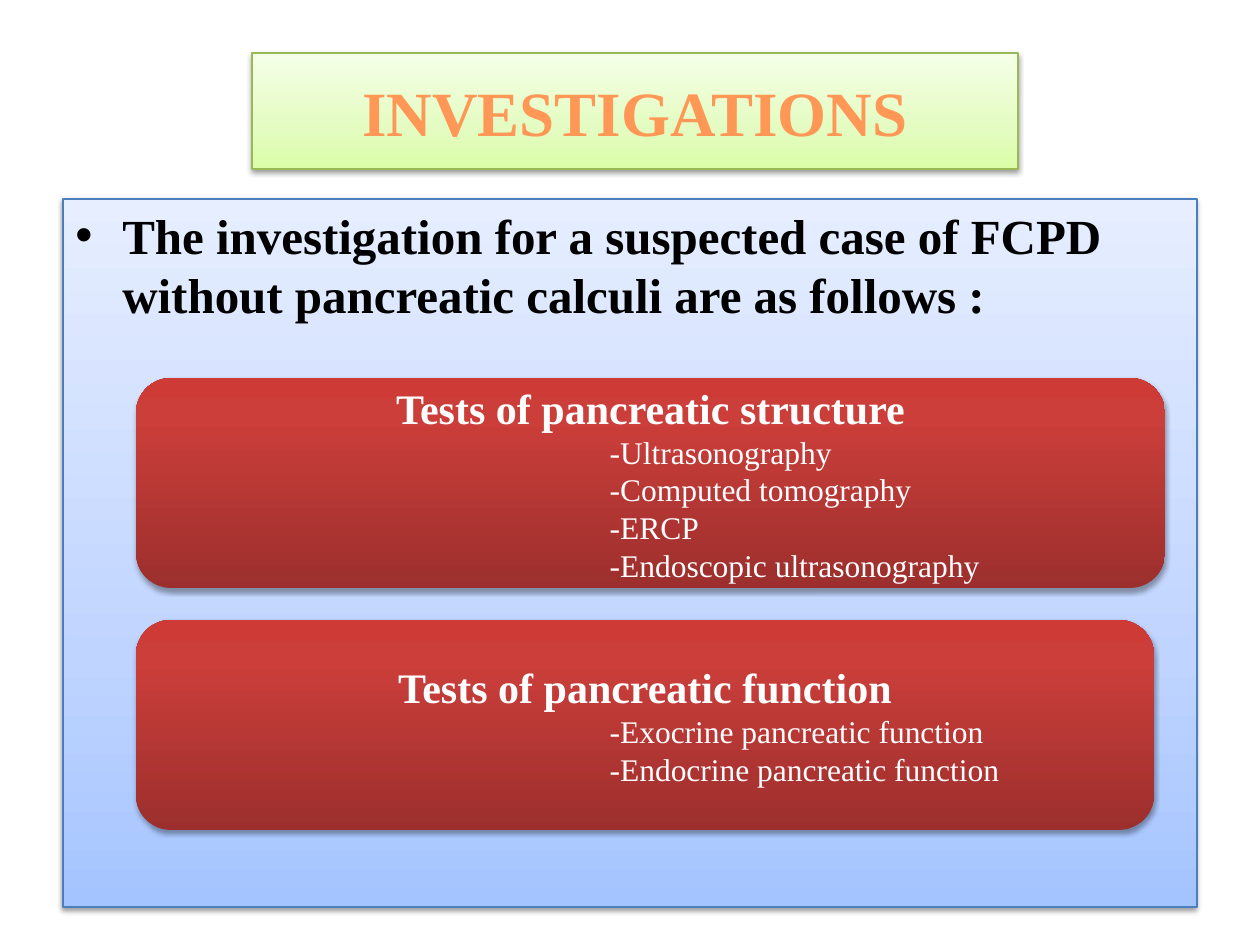
import pptx
import pptx.dml.color
import pptx.enum.shapes
import pptx.enum.text
import pptx.oxml.ns
import pptx.util
from lxml import etree

PX = 914400 / 126
FONT = "Times New Roman"
CENTER = pptx.enum.text.PP_ALIGN.CENTER
LEFT = pptx.enum.text.PP_ALIGN.LEFT
MIDDLE = pptx.enum.text.MSO_ANCHOR.MIDDLE
TOP = pptx.enum.text.MSO_ANCHOR.TOP
RECTANGLE = pptx.enum.shapes.MSO_SHAPE.RECTANGLE
ROUNDED = pptx.enum.shapes.MSO_SHAPE.ROUNDED_RECTANGLE

GREEN = [(0, "DAFDA7"), (35, "E4FCC2"), (100, "F5FFE7")]
BLUE = [(0, "A4C4FF"), (35, "BFD4FF"), (100, "E6EEFF")]
RED = [(0, "9C2F2D"), (80, "CB3E3A"), (100, "CE3B37")]


def px(length):
    return pptx.util.Emu(round(length * PX))


def color(value):
    return pptx.dml.color.RGBColor.from_string(value)


def add_element(parent, tag, **attributes):
    element = etree.SubElement(parent, pptx.oxml.ns.qn(tag))
    for name, value in attributes.items():
        element.set(name, str(value))
    return element


def set_gradient(shape, stops):
    """Fill the shape from bottom to top with (percent, colour) stops."""
    shape.fill.gradient()
    shape.fill.gradient_angle = 90
    stop_list = shape.element.spPr.find(".//" + pptx.oxml.ns.qn("a:gsLst"))
    for stop in list(stop_list):
        stop_list.remove(stop)
    for percent, value in stops:
        stop = add_element(stop_list, "a:gs", pos=percent * 1000)
        add_element(stop, "a:srgbClr", val=value)


def set_shadow(shape, opacity, distance):
    shape.shadow.inherit = False
    effects = shape.element.spPr.find(pptx.oxml.ns.qn("a:effectLst"))
    shadow = add_element(effects, "a:outerShdw", blurRad=pptx.util.Pt(3.1),
                         dist=pptx.util.Pt(distance), dir=5400000, rotWithShape=0)
    shadow_color = add_element(shadow, "a:srgbClr", val="000000")
    add_element(shadow_color, "a:alpha", val=opacity * 1000)


def add_box(slide, box, kind, stops, line=None, opacity=38, distance=1.6, anchor=MIDDLE):
    shape = slide.shapes.add_shape(kind, *map(px, box))
    set_gradient(shape, stops)
    if line:
        shape.line.color.rgb = color(line)
        shape.line.width = pptx.util.Pt(0.75)
    else:
        shape.line.fill.background()
    set_shadow(shape, opacity, distance)
    shape.text_frame.word_wrap = True
    shape.text_frame.vertical_anchor = anchor
    return shape


def add_text(shape, text, size, value, bold=False, align=CENTER, indent=0, bullet=None, before=0):
    """Write one paragraph, reusing the first one while it is empty."""
    frame = shape.text_frame
    paragraph = frame.paragraphs[0] if not frame.text else frame.add_paragraph()
    paragraph.alignment = align
    paragraph.space_before = pptx.util.Pt(before)
    properties = paragraph._p.get_or_add_pPr()
    properties.set("marL", str(px(indent)))
    if bullet:
        properties.set("indent", str(-px(indent)))
        add_element(properties, "a:buFont", typeface="Arial")
        add_element(properties, "a:buChar", char=bullet)
    run = paragraph.add_run()
    run.text = text
    run.font.name = FONT
    run.font.size = pptx.util.Pt(size)
    run.font.bold = bold
    run.font.color.rgb = color(value)


def add_title(slide, box):
    shape = add_box(slide, box, RECTANGLE, GREEN, line="98B955")
    add_text(shape, "INVESTIGATIONS", 36, "FF9856", bold=True)


def add_test_card(slide, box, heading, tests):
    shape = add_box(slide, box, ROUNDED, RED, opacity=35, distance=1.8)
    add_text(shape, heading, 24, "FFFFFF", bold=True)
    for test in tests:
        add_text(shape, "-" + test, 18, "FFFFFF", align=LEFT, indent=451)


def add_body(slide, box):
    left, top, width, height = box
    panel = add_box(slide, box, RECTANGLE, BLUE, line="4B7EBC", anchor=TOP)
    add_text(panel, "The investigation for a suspected case of FCPD without "
             "pancreatic calculi are as follows :", 28, "000000", bold=True,
             align=LEFT, indent=47, bullet="•", before=5.6)
    cards = [
        (1029, "Tests of pancreatic structure",
         ["Ultrasonography", "Computed tomography", "ERCP", "Endoscopic ultrasonography"]),
        (1018, "Tests of pancreatic function",
         ["Exocrine pancreatic function", "Endocrine pancreatic function"]),
    ]
    for row, (card_width, heading, tests) in enumerate(cards):
        card = (left + 73, top + 179 + row * 242, card_width, 210)
        add_test_card(slide, card, heading, tests)


def main():
    presentation = pptx.Presentation()
    presentation.slide_width = px(1260)
    presentation.slide_height = px(945)
    slide = presentation.slides.add_slide(presentation.slide_layouts[6])
    add_title(slide, (252, 53, 766, 116))
    add_body(slide, (63, 199, 1134, 708))
    presentation.save("out.pptx")


if __name__ == "__main__":
    main()
